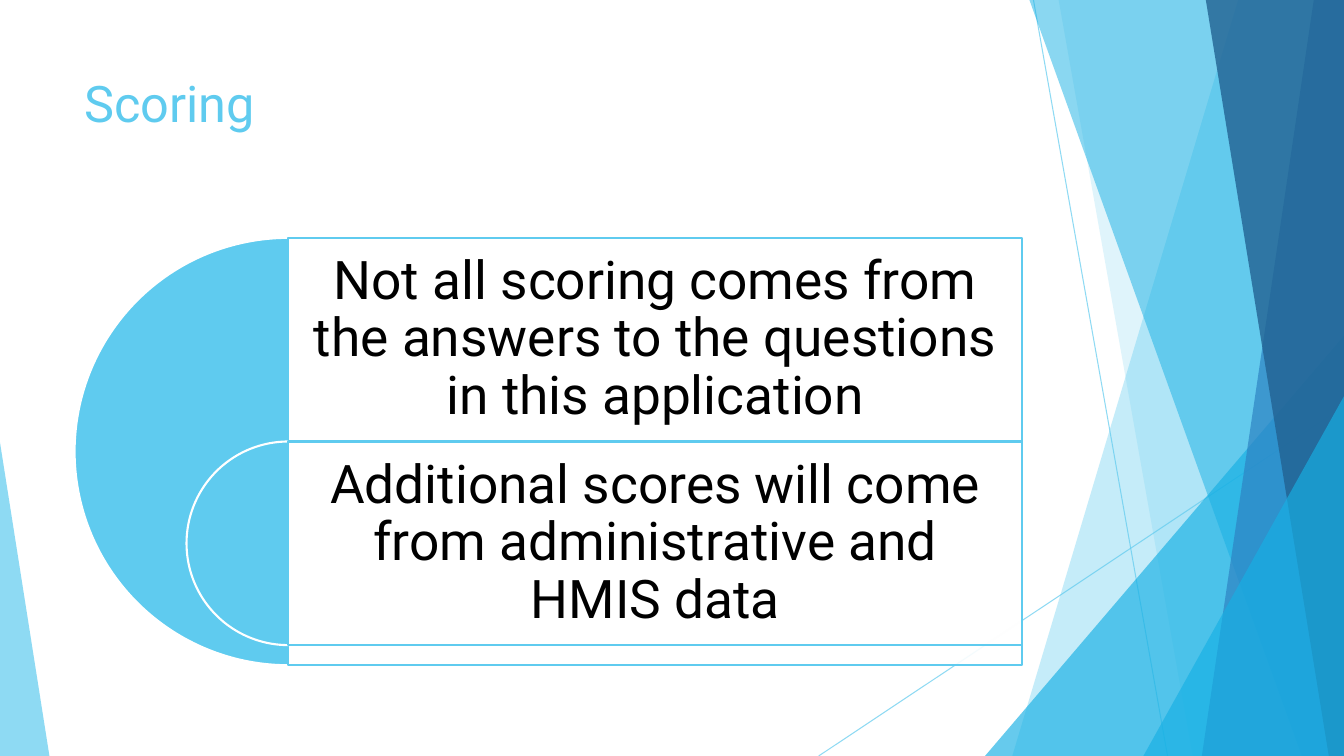
from lxml import etree
from pptx import Presentation
from pptx.dml.color import RGBColor
from pptx.enum.shapes import MSO_CONNECTOR, MSO_SHAPE
from pptx.enum.text import MSO_ANCHOR, PP_ALIGN
from pptx.oxml.ns import qn
from pptx.util import Pt

PX = 9144
WIDE, HIGH = 1333, 750
FONT = "Roboto"

SKY = RGBColor(0x5F, 0xCB, 0xEF)
CYAN = RGBColor(0x17, 0xB0, 0xE4)
BLUE = RGBColor(0x2E, 0x83, 0xC3)
NAVY = RGBColor(0x22, 0x62, 0x92)
WHITE = RGBColor(0xFF, 0xFF, 0xFF)
BLACK = RGBColor(0, 0, 0)

STRAIGHT = MSO_CONNECTOR.STRAIGHT
WEDGE = MSO_SHAPE.ISOSCELES_TRIANGLE
PIE = MSO_SHAPE.PIE
RECT = MSO_SHAPE.RECTANGLE
TOP, MIDDLE = MSO_ANCHOR.TOP, MSO_ANCHOR.MIDDLE
LEFT, CENTER = PP_ALIGN.LEFT, PP_ALIGN.CENTER

RAYS = [(1025, 0, 1158, HIGH), (WIDE, 403, 812, HIGH)]
BACK = [(1228, 1004, SKY, 36), (1050, 1183, SKY, 20)]
FRONT = [
    (1021, 1291, CYAN, 50),
    (1303, 1192, BLUE, 70),
    (1196, 1318, NAVY, 80),
]

EDGE, SPAN = 286, 728
ROW_TOP, ROW = 236, 202
ITEMS = [
    ("Not all scoring comes from the answers to the questions in this application", 424),
    ("Additional scores will come from administrative and HMIS data", 202),
]


def emu(*sizes):
    return [size * PX for size in sizes]


def fade(node, alpha):
    color = node.find(".//" + qn("a:srgbClr"))
    etree.SubElement(color, qn("a:alpha")).set("val", str(alpha * 1000))


def paint(shape, color, alpha=100, line=None):
    shape.shadow.inherit = False
    shape.fill.solid()
    shape.fill.fore_color.rgb = color
    if alpha < 100:
        fade(shape._element.spPr.find(qn("a:solidFill")), alpha)
    if line is None:
        shape.line.fill.background()
    else:
        shape.line.color.rgb = line
        shape.line.width = Pt(1.5)


def add_ray(slide, ends):
    ray = slide.shapes.add_connector(STRAIGHT, *emu(*ends))
    ray.line.color.rgb = SKY
    ray.line.width = Pt(0.75)
    props = ray._element.spPr
    fade(props.find(qn("a:ln")), 70)
    etree.SubElement(props, qn("a:effectLst"))


def add_band(slide, top, foot, color, alpha):
    pen = slide.shapes.build_freeform(top, 0, scale=PX)
    pen.add_line_segments([(WIDE, 0), (WIDE, HIGH), (foot, HIGH)], close=True)
    paint(pen.convert_to_shape(), color, alpha)


def add_wedge(slide, box, tip, color, alpha):
    wedge = slide.shapes.add_shape(WEDGE, *emu(*box))
    wedge.adjustments[0] = tip
    paint(wedge, color, alpha)


def add_run(para, text, size, color):
    run = para.add_run()
    run.text = text
    run.font.name = FONT
    run.font.size = Pt(size)
    run.font.color.rgb = color


def add_title(slide, text):
    title = slide.shapes.title
    title.left, title.top, title.width, title.height = emu(74, 67, 940, 144)
    frame = title.text_frame
    frame.vertical_anchor = TOP
    para = frame.paragraphs[0]
    para.alignment = LEFT
    add_run(para, text, 36, SKY)


def add_item(slide, top, text, size):
    pie = slide.shapes.add_shape(PIE, *emu(EDGE - size // 2, top, size, size))
    pie.adjustments[0], pie.adjustments[1] = 54, 162
    paint(pie, SKY, line=WHITE)

    panel = slide.shapes.add_shape(RECT, *emu(EDGE, top, SPAN, size))
    paint(panel, WHITE, 90, SKY)

    frame = slide.shapes.add_textbox(*emu(EDGE, top, SPAN, ROW)).text_frame
    frame.word_wrap = True
    frame.vertical_anchor = MIDDLE
    frame.margin_left = frame.margin_right = 16 * PX
    frame.margin_top = frame.margin_bottom = 16 * PX
    para = frame.paragraphs[0]
    para.alignment = CENTER
    para.line_spacing = 0.9
    add_run(para, text, 38, BLACK)


def main():
    deck = Presentation()
    deck.slide_width, deck.slide_height = emu(WIDE, HIGH)
    slide = deck.slides.add_slide(deck.slide_layouts[5])

    for ends in RAYS:
        add_ray(slide, ends)
    for band in BACK:
        add_band(slide, *band)
    add_wedge(slide, (977, 333, 356, 417), 1, CYAN, 66)
    for band in FRONT:
        add_band(slide, *band)
    add_wedge(slide, (1134, 393, 199, 357), 1, CYAN, 66)
    add_wedge(slide, (0, 439, 49, 311), 0, SKY, 70)

    add_title(slide, "Scoring")
    for row, (text, size) in enumerate(ITEMS):
        add_item(slide, ROW_TOP + row * ROW, text, size)
    deck.save("out.pptx")


if __name__ == "__main__":
    main()
